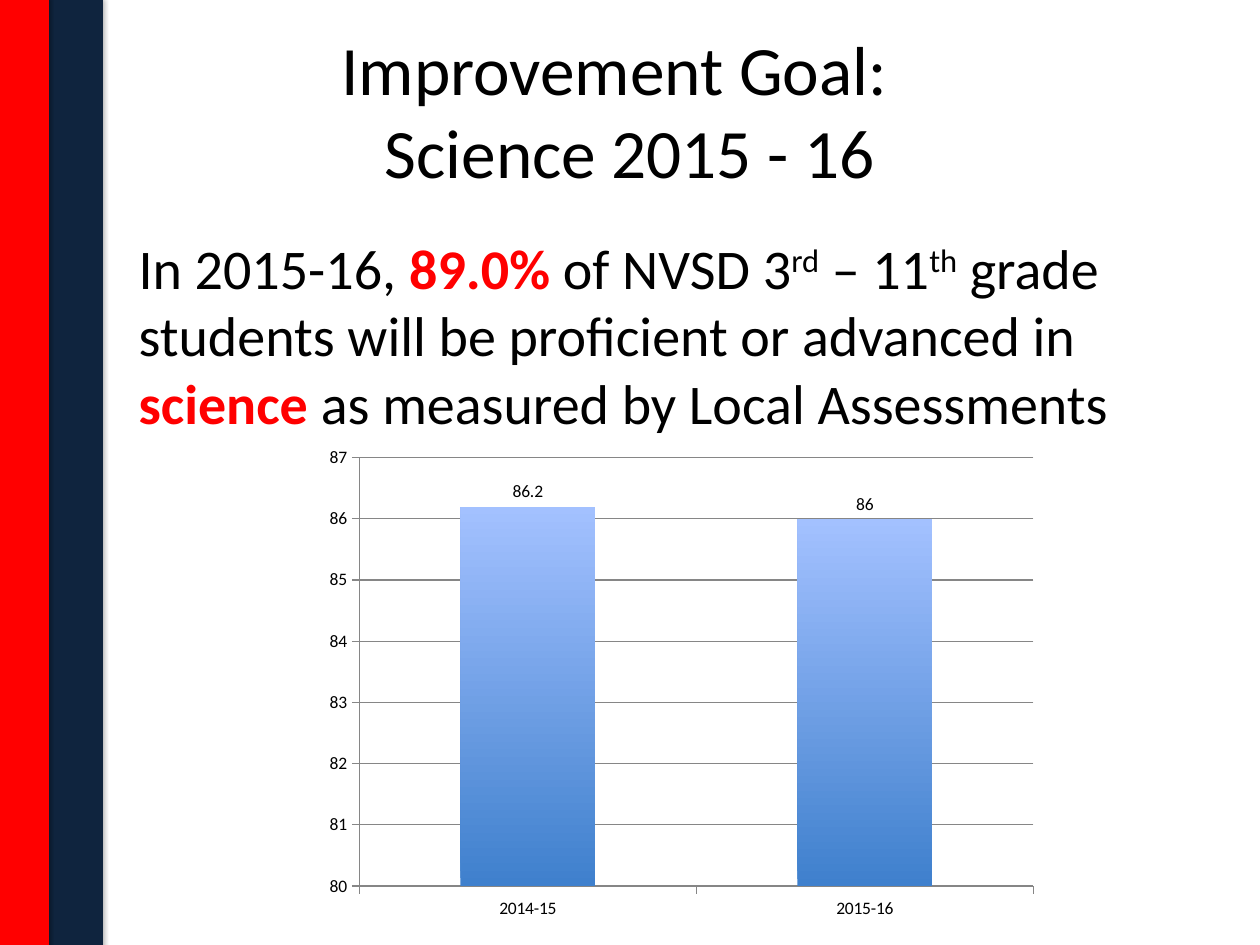
"""Build the science improvement goal slide with its column chart."""
from dataclasses import dataclass

import lxml.etree
import pptx
import pptx.chart.data
import pptx.dml.color
import pptx.enum.chart
import pptx.enum.text
import pptx.oxml
import pptx.oxml.ns
import pptx.util

EMU_PER_PX = 914400 / 126


@dataclass(frozen=True)
class Theme:
    font: str = "Calibri"
    black: str = "000000"
    red: str = "FF0000"
    navy: str = "0F243E"
    axis: str = "868686"
    bar_top: str = "A3C1FF"
    bar_bottom: str = "3F80CD"
    title_size: float = 39.6
    body_size: float = 32
    chart_size: float = 10


@dataclass(frozen=True)
class Box:
    left: int
    top: int
    width: int
    height: int

    def emu(self) -> tuple:
        return tuple(px(value) for value in (self.left, self.top, self.width, self.height))


@dataclass(frozen=True)
class Stripe:
    box: Box
    fill: str
    outlined: bool


@dataclass(frozen=True)
class Span:
    text: str
    highlight: bool = False
    raised: bool = False


THEME = Theme()
TITLE_BOX = Box(63, 48, 1134, 157)
BODY_BOX = Box(126, 221, 1134, 684)
CHART_BOX = Box(315, 438, 733, 490)
STRIPES = (
    Stripe(Box(4, -5, 99, 965), THEME.navy, False),
    Stripe(Box(-2, -5, 50, 965), THEME.red, True),
)
GOAL = (
    Span("In 2015-16, "),
    Span("89.0% ", highlight=True),
    Span("of NVSD 3"),
    Span("rd", raised=True),
    Span(" – 11"),
    Span("th", raised=True),
    Span(" grade students will be proficient or advanced in "),
    Span("science ", highlight=True),
    Span("as measured by Local Assessments"),
)
RESULTS = {"2014-15": 86.2, "2015-16": 86}


def px(value: int) -> int:
    return pptx.util.Emu(round(value * EMU_PER_PX))


def rgb(color: str) -> pptx.dml.color.RGBColor:
    return pptx.dml.color.RGBColor.from_string(color)


def format_font(font, size: float, color: str = THEME.black, bold: bool = False) -> None:
    font.name = THEME.font
    font.size = pptx.util.Pt(size)
    font.bold = bold
    font.color.rgb = rgb(color)


def add_text(paragraph, text: str, *, size: float, color: str = THEME.black,
             bold: bool = False, raised: bool = False) -> None:
    for index, line in enumerate(text.split("\n")):
        if index:
            paragraph.add_line_break()
        run = paragraph.add_run()
        run.text = line
        format_font(run.font, size, color, bold)
        if raised:
            run.font._element.set("baseline", "30000")


def prepare_placeholder(shape, box: Box, anchor, alignment):
    shape.left, shape.top, shape.width, shape.height = box.emu()
    frame = shape.text_frame
    frame.word_wrap = True
    frame.auto_size = pptx.enum.text.MSO_AUTO_SIZE.NONE
    frame.vertical_anchor = anchor
    inset = pptx.util.Inches(0.1)
    frame.margin_left = frame.margin_top = frame.margin_right = frame.margin_bottom = inset
    paragraph = frame.paragraphs[0]
    paragraph.alignment = alignment
    paragraph.space_before = pptx.util.Pt(0)
    return paragraph


def remove_bullet(paragraph) -> None:
    properties = paragraph._p.get_or_add_pPr()
    properties.set("marL", "0")
    properties.set("indent", "0")
    lxml.etree.SubElement(properties, pptx.oxml.ns.qn("a:buNone"))


def add_shadow(shape) -> None:
    shape.shadow.inherit = False
    effects = shape._element.spPr.find(pptx.oxml.ns.qn("a:effectLst"))
    effects.append(pptx.oxml.parse_xml(
        f'<a:outerShdw {pptx.oxml.ns.nsdecls("a")} blurRad="39370" dist="22860" '
        f'dir="5400000" rotWithShape="0"><a:srgbClr val="{THEME.black}">'
        '<a:alpha val="35000"/></a:srgbClr></a:outerShdw>'))


def add_stripe(group, stripe: Stripe) -> None:
    shape = group.shapes.add_shape(
        pptx.enum.shapes.MSO_SHAPE.RECTANGLE, *stripe.box.emu())
    shape.fill.solid()
    shape.fill.fore_color.rgb = rgb(stripe.fill)
    if stripe.outlined:
        shape.line.color.rgb = rgb(stripe.fill)
        shape.line.width = pptx.util.Pt(0.75)
    else:
        shape.line.fill.background()
    add_shadow(shape)


def format_line(line) -> None:
    line.color.rgb = rgb(THEME.axis)
    line.width = pptx.util.Pt(0.75)


def add_results_chart(slide) -> None:
    data = pptx.chart.data.CategoryChartData()
    data.categories = list(RESULTS)
    data.add_series("Series 1", list(RESULTS.values()))
    chart = slide.shapes.add_chart(
        pptx.enum.chart.XL_CHART_TYPE.COLUMN_CLUSTERED, *CHART_BOX.emu(), data).chart
    chart.has_title = False
    chart.has_legend = False
    format_font(chart.font, THEME.chart_size)
    for axis in (chart.category_axis, chart.value_axis):
        axis.major_tick_mark = pptx.enum.chart.XL_TICK_MARK.OUTSIDE
        format_line(axis.format.line)
    value_axis = chart.value_axis
    value_axis.minimum_scale, value_axis.maximum_scale = 80, 87
    value_axis.major_unit = 1
    value_axis.has_major_gridlines = True
    format_line(value_axis.major_gridlines.format.line)
    plot = chart.plots[0]
    plot.vary_by_categories = False
    plot.gap_width = 150
    plot.has_data_labels = True
    plot.data_labels.show_value = True
    plot.data_labels.position = pptx.enum.chart.XL_LABEL_POSITION.OUTSIDE_END
    format_font(plot.data_labels.font, THEME.chart_size)
    fill = plot.series[0].format.fill
    fill.gradient()
    fill.gradient_angle = 90
    for stop, color in zip(fill.gradient_stops, (THEME.bar_bottom, THEME.bar_top)):
        stop.color.rgb = rgb(color)


def main() -> None:
    presentation = pptx.Presentation()
    presentation.slide_width = pptx.util.Inches(10)
    presentation.slide_height = pptx.util.Inches(7.5)
    slide = presentation.slides.add_slide(presentation.slide_layouts[1])
    anchors, alignments = pptx.enum.text.MSO_ANCHOR, pptx.enum.text.PP_ALIGN
    title = prepare_placeholder(
        slide.shapes.title, TITLE_BOX, anchors.BOTTOM, alignments.CENTER)
    add_text(title, "Improvement Goal:  \nScience 2015 - 16", size=THEME.title_size)
    body = prepare_placeholder(
        slide.placeholders[1], BODY_BOX, anchors.TOP, alignments.LEFT)
    remove_bullet(body)
    for span in GOAL:
        add_text(body, span.text, size=THEME.body_size, bold=span.highlight,
                 color=THEME.red if span.highlight else THEME.black, raised=span.raised)
    group = slide.shapes.add_group_shape()
    for stripe in STRIPES:
        add_stripe(group, stripe)
    add_results_chart(slide)
    presentation.save("out.pptx")


if __name__ == "__main__":
    main()
